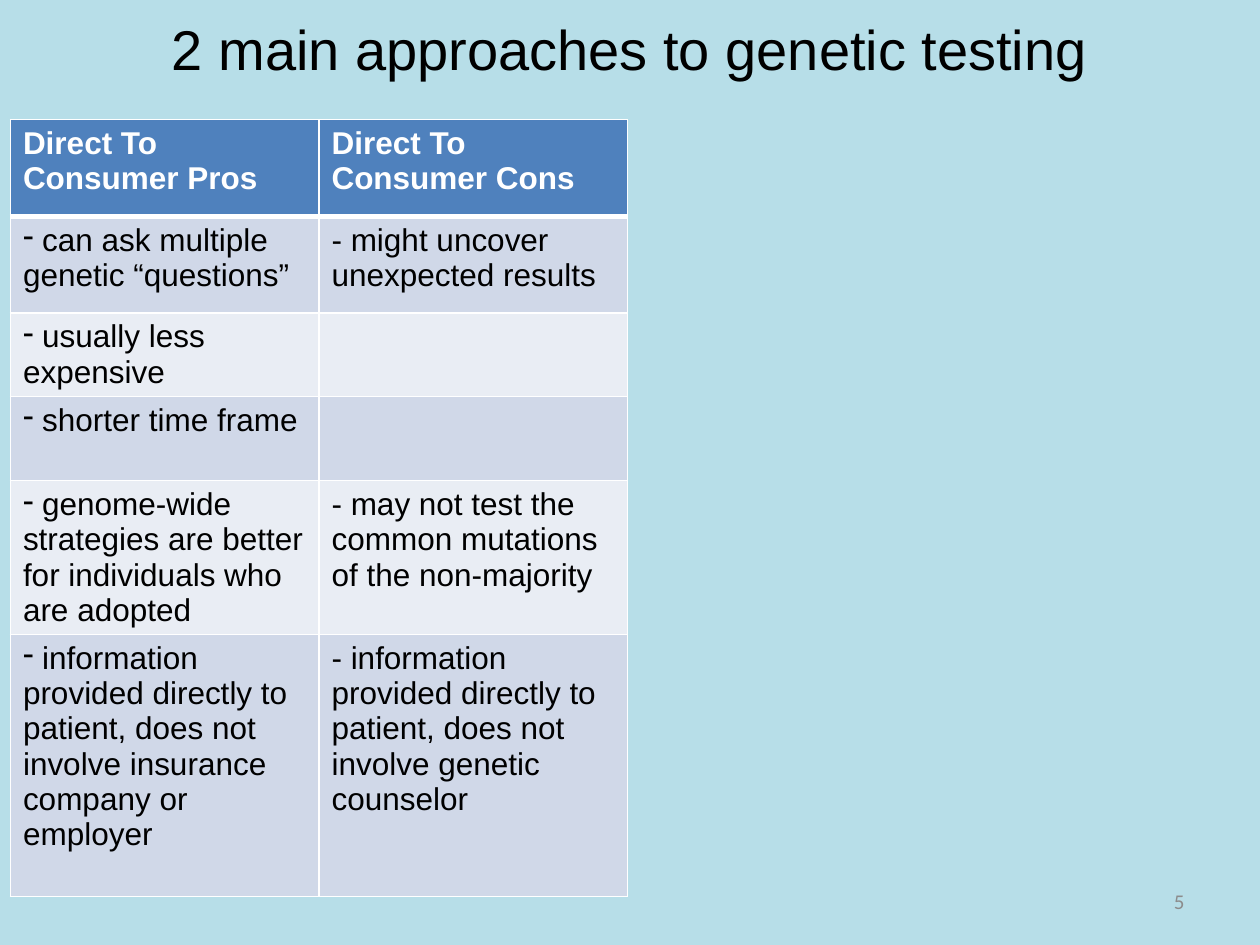
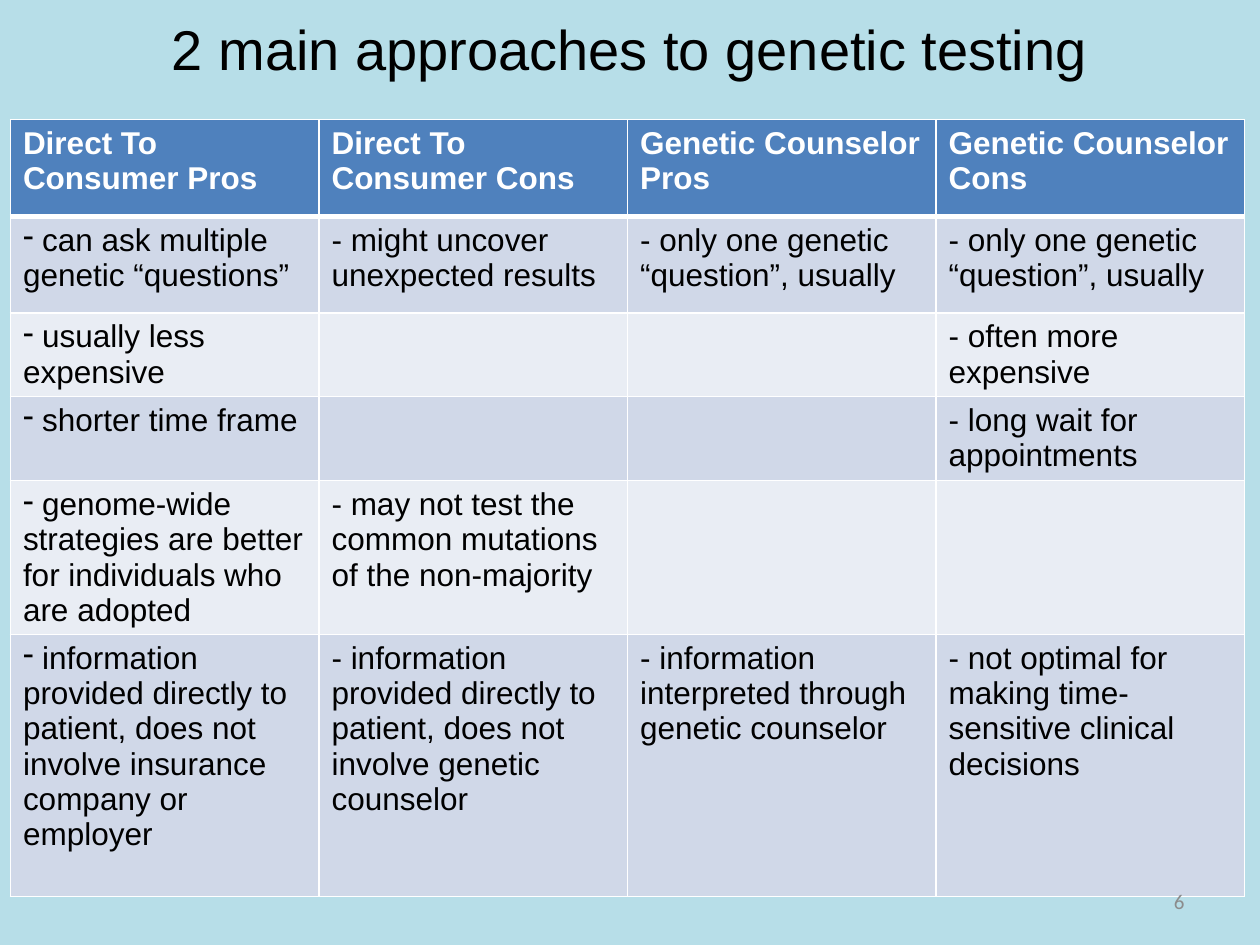
from lxml.etree import SubElement
from pptx import Presentation
from pptx.dml.color import RGBColor
from pptx.enum.text import MSO_ANCHOR, PP_ALIGN
from pptx.oxml import parse_xml
from pptx.oxml.ns import nsdecls, qn
from pptx.util import Cm, Pt

SKY = RGBColor(0xB7, 0xDE, 0xE8)
HEADER_BLUE = RGBColor(0x4F, 0x81, 0xBD)
BAND_DARK = RGBColor(0xD0, 0xD8, 0xE8)
BAND_LIGHT = RGBColor(0xE9, 0xED, 0xF4)
WHITE = RGBColor(0xFF, 0xFF, 0xFF)
BLACK = RGBColor(0, 0, 0)
GREY = RGBColor(0x8C, 0x8C, 0x8C)

TITLE = "2 main approaches to genetic testing"
COL_WIDTH = Cm(6.22)
ROW_HEIGHTS = [Cm(h) for h in (1.95, 1.95, 1.68, 1.7, 3.1, 5.28)]
FIRST_NUMBER = 5

APPROACHES = [
    ["Direct To Consumer Pros", "Direct To Consumer Cons",
     "Genetic Counselor Pros", "Genetic Counselor Cons"],
    ["can ask multiple genetic “questions”", "might uncover unexpected results",
     "only one genetic “question”, usually", "only one genetic “question”, usually"],
    ["usually less expensive", "", "", "often more expensive"],
    ["shorter time frame", "", "", "long wait for appointments"],
    ["genome-wide strategies are better for individuals who are adopted",
     "may not test the common mutations of the non-majority", "", ""],
    ["information provided directly to patient, does not involve insurance company or employer",
     "information provided directly to patient, does not involve genetic counselor",
     "information interpreted through genetic counselor",
     "not optimal for making time-sensitive clinical decisions"],
]


class Deck:
    def __init__(self):
        self.prs = Presentation()
        self.prs.slide_width, self.prs.slide_height = Cm(25.4), Cm(19.05)
        self.s = None

    def add_slide(self):
        self.s = self.prs.slides.add_slide(self.prs.slide_layouts[5])
        fill = self.s.background.fill
        fill.solid()
        fill.fore_color.rgb = SKY

    def add_run(self, p, text, size, color, font="Arial", bold=False):
        r = p.add_run()
        r.text = text
        r.font.name, r.font.size, r.font.bold = font, Pt(size), bold
        r.font.color.rgb = color

    def title(self, text):
        sp = self.s.shapes.title
        sp.left, sp.top, sp.width, sp.height = Cm(1.27), Cm(-0.61), Cm(22.86), Cm(3.18)
        tf = sp.text_frame
        tf.vertical_anchor = MSO_ANCHOR.MIDDLE
        p = tf.paragraphs[0]
        p.alignment = PP_ALIGN.CENTER
        self.add_run(p, text, 32, BLACK)

    def borders(self, cell, top, bottom):
        """Draw white cell borders; top and bottom are widths in points."""
        tc_pr = cell._tc.get_or_add_tcPr()
        for i, (side, width) in enumerate(zip("LRTB", (1, 1, top, bottom))):
            tc_pr.insert(i, parse_xml(
                f'<a:ln{side} {nsdecls("a")} w="{Pt(width)}"><a:solidFill>'
                f'<a:srgbClr val="{WHITE}"/></a:solidFill></a:ln{side}>'))

    def table(self, rows):
        n_cols = len(rows[0])
        table = self.s.shapes.add_table(len(rows), n_cols, Cm(0.21), Cm(2.41),
                                        COL_WIDTH * n_cols, sum(ROW_HEIGHTS)).table
        for column in table.columns:
            column.width = COL_WIDTH
        for i, texts in enumerate(rows):
            table.rows[i].height = ROW_HEIGHTS[i]
            for j, text in enumerate(texts):
                self.cell(table.cell(i, j), i, j, text)

    def cell(self, cell, row, col, text):
        header = row == 0
        cell.fill.solid()
        cell.fill.fore_color.rgb = HEADER_BLUE if header else (BAND_LIGHT, BAND_DARK)[row % 2]
        self.borders(cell, top=3 if row == 1 else 1, bottom=3 if header else 1)
        if not text:
            return
        p = cell.text_frame.paragraphs[0]
        if not header and col == 0:
            p_pr = p._p.get_or_add_pPr()
            p_pr.set("marL", "0")
            p_pr.set("indent", "0")
            SubElement(p_pr, qn("a:buChar"), char="-")
            text = f" {text}"
        elif not header:
            text = f"- {text}"
        self.add_run(p, text, 18, WHITE if header else BLACK, bold=header)

    def slide_number(self, number):
        tf = self.s.shapes.add_textbox(Cm(18.2), Cm(17.66), Cm(5.93), Cm(1.01)).text_frame
        tf.word_wrap = True
        tf.vertical_anchor = MSO_ANCHOR.MIDDLE
        p = tf.paragraphs[0]
        p.alignment = PP_ALIGN.RIGHT
        self.add_run(p, str(number), 12, GREY, font="Calibri")


def main():
    deck = Deck()
    for number, n_cols in enumerate((2, 4), FIRST_NUMBER):
        deck.add_slide()
        deck.title(TITLE)
        deck.table([row[:n_cols] for row in APPROACHES])
        deck.slide_number(number)
    deck.prs.save("out.pptx")


if __name__ == "__main__":
    main()
